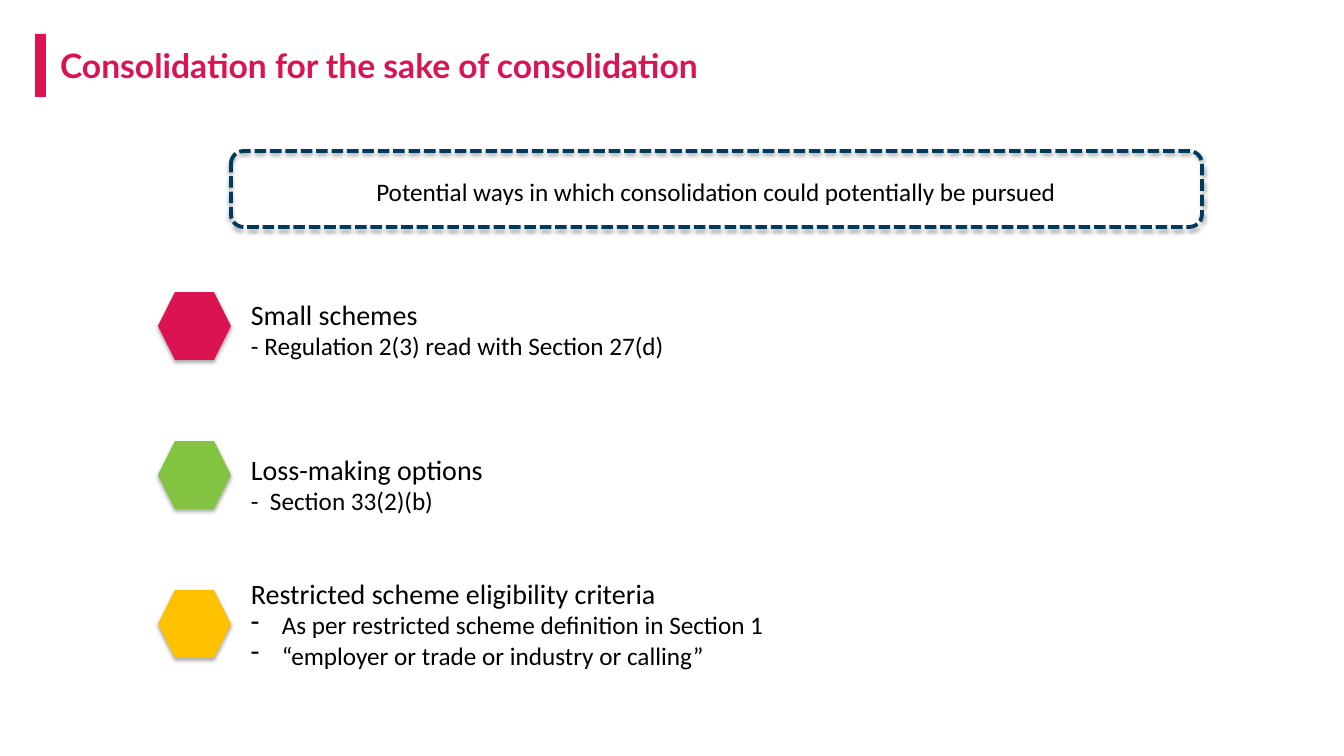
from lxml import etree
from pptx import Presentation
from pptx.dml.color import RGBColor
from pptx.enum.dml import MSO_LINE
from pptx.enum.shapes import MSO_SHAPE
from pptx.enum.text import MSO_ANCHOR, PP_ALIGN
from pptx.oxml.ns import qn
from pptx.util import Emu, Pt

RECT, HEX, ROUND = MSO_SHAPE.RECTANGLE, MSO_SHAPE.HEXAGON, MSO_SHAPE.ROUNDED_RECTANGLE
LEFT, CENTER = PP_ALIGN.LEFT, PP_ALIGN.CENTER
TOP, MIDDLE = MSO_ANCHOR.TOP, MSO_ANCHOR.MIDDLE
DASH = MSO_LINE.SQUARE_DOT

ROSE = RGBColor(0xDC, 0x13, 0x51)
GREEN = RGBColor(0x82, 0xC3, 0x41)
AMBER = RGBColor(0xFF, 0xC0, 0x00)
NAVY = RGBColor(0x00, 0x3A, 0x5D)
BLACK = RGBColor(0, 0, 0)

SCALE = 914400 / 100.8
TITLE = {"name": "Lato", "size": Pt(24), "bold": True}
HEAD = {"name": "Calibri", "size": Pt(20)}
BODY = {"name": "Calibri", "size": Pt(18)}


def px(num):
    """Turn px into EMU."""
    return Emu(round(num * SCALE))


class Board:
    """Draw the elements of one slide in a shared style."""

    def __init__(self, deck):
        """Add a title-only slide."""
        self.slide = deck.slides.add_slide(deck.slide_layouts[5])
        self.shapes = self.slide.shapes

    def label(self, para, text, style, color=BLACK, align=LEFT):
        """Fill a paragraph with one styled run."""
        para.alignment = align
        run = para.add_run()
        run.text = text
        for key, value in style.items():
            setattr(run.font, key, value)
        run.font.color.rgb = color

    def title(self, text, box):
        """Place and format the title."""
        shape = self.shapes.title
        sides = ("left", "top", "width", "height")
        for key, value in zip(sides, box):
            setattr(shape, key, px(value))
        shape.text_frame.vertical_anchor = TOP
        self.label(shape.text_frame.paragraphs[0], text, TITLE, ROSE)

    def shape(self, kind, box, fill=None, shade=True):
        """Add a preset shape, filled or with a dashed outline."""
        shape = self.shapes.add_shape(kind, *map(px, box))
        shape.shadow.inherit = False
        if fill is None:
            shape.fill.background()
            shape.line.color.rgb = NAVY
            shape.line.width = Pt(2.75)
            shape.line.dash_style = DASH
        else:
            shape.fill.solid()
            shape.fill.fore_color.rgb = fill
            shape.line.fill.background()
        if shade:
            self.shade(shape)

    def shade(self, shape):
        """Add a soft shadow below a shape."""
        effect = shape._element.spPr.find(qn("a:effectLst"))
        outer = etree.SubElement(
            effect, qn("a:outerShdw"), blurRad=str(Pt(3.1)),
            dist=str(Pt(1.8)), dir="5400000", rotWithShape="0")
        color = etree.SubElement(outer, qn("a:srgbClr"), val="000000")
        etree.SubElement(color, qn("a:alpha"), val="35000")

    def text(self, box, lines, align=LEFT, anchor=TOP, dash=False):
        """Add a text box from pairs of text and style."""
        frame = self.shapes.add_textbox(*map(px, box)).text_frame
        frame.word_wrap = True
        frame.vertical_anchor = anchor
        frame.margin_top = frame.margin_bottom = 0
        for num, (text, style) in enumerate(lines):
            para = frame.add_paragraph() if num else frame.paragraphs[0]
            self.label(para, text, style, align=align)
            if dash and num:
                self.bullet(para)

    def bullet(self, para):
        """Give a paragraph a dash bullet with a hanging indent."""
        props = para._p.get_or_add_pPr()
        props.set("marL", str(px(31)))
        props.set("indent", str(px(-31)))
        etree.SubElement(props, qn("a:buFontTx"))
        etree.SubElement(props, qn("a:buChar"), char="-")


ITEMS = [
    (ROSE, 297, False, "Small schemes", ["- Regulation 2(3) read with Section 27(d)"]),
    (GREEN, 452, False, "Loss-making options", ["-  Section 33(2)(b)"]),
    (AMBER, 576, True, "Restricted scheme eligibility criteria",
     ["As per restricted scheme definition in Section 1",
      "“employer or trade or industry or calling”"]),
]


def main():
    """Build and save the slide."""
    deck = Presentation()
    deck.slide_width, deck.slide_height = px(1344), px(756)
    board = Board(deck)
    board.title("Consolidation for the sake of consolidation", (50, 40, 890, 50))
    board.shape(RECT, (35, 34, 11, 63), ROSE, shade=False)
    board.shape(ROUND, (231, 151, 971, 76))
    board.text((241, 174, 950, 34),
               [("Potential ways in which consolidation could potentially be pursued", BODY)],
               CENTER, MIDDLE)
    for num, (color, top, dash, head, notes) in enumerate(ITEMS):
        board.shape(HEX, (158, 292 + 149 * num, 73, 68), color)
        lines = [(head, HEAD)] + [(note, BODY) for note in notes]
        board.text((241, top, 950, 34 + 30 * len(notes)), lines, dash=dash)
    deck.save("out.pptx")


if __name__ == "__main__":
    main()
